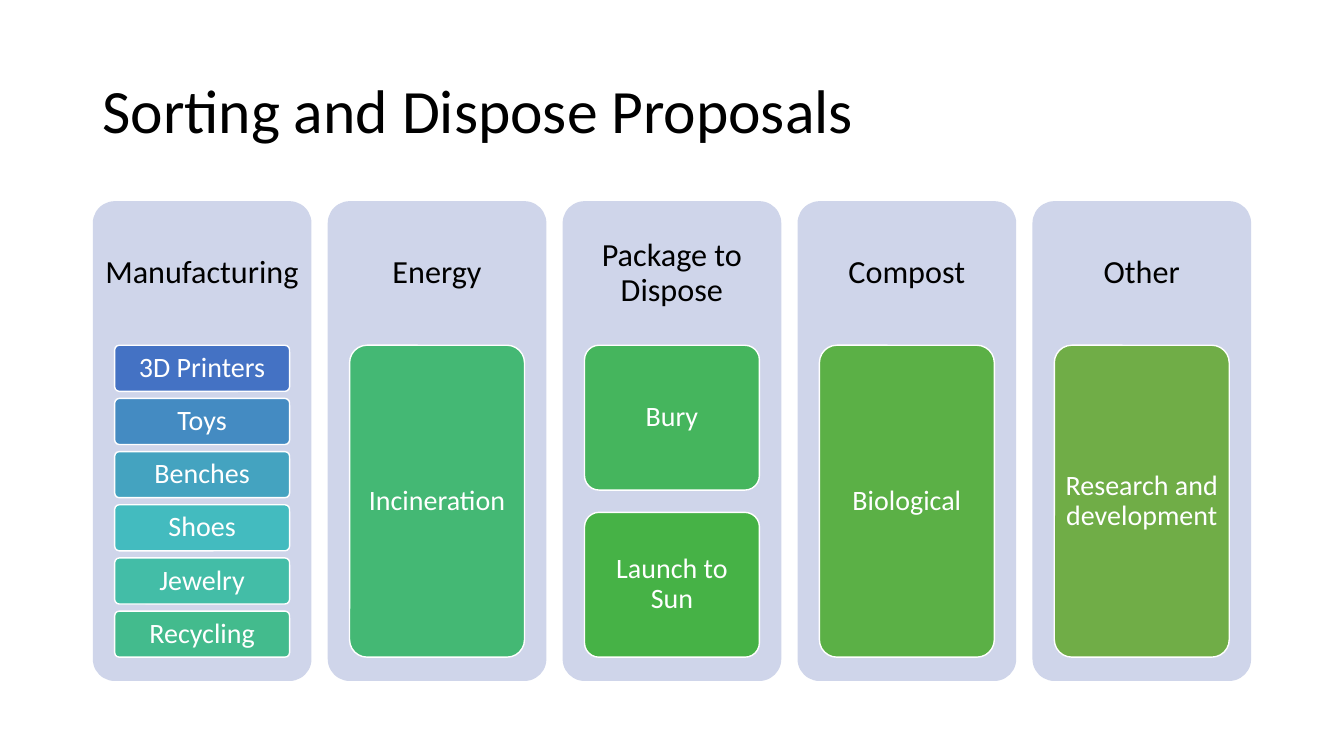
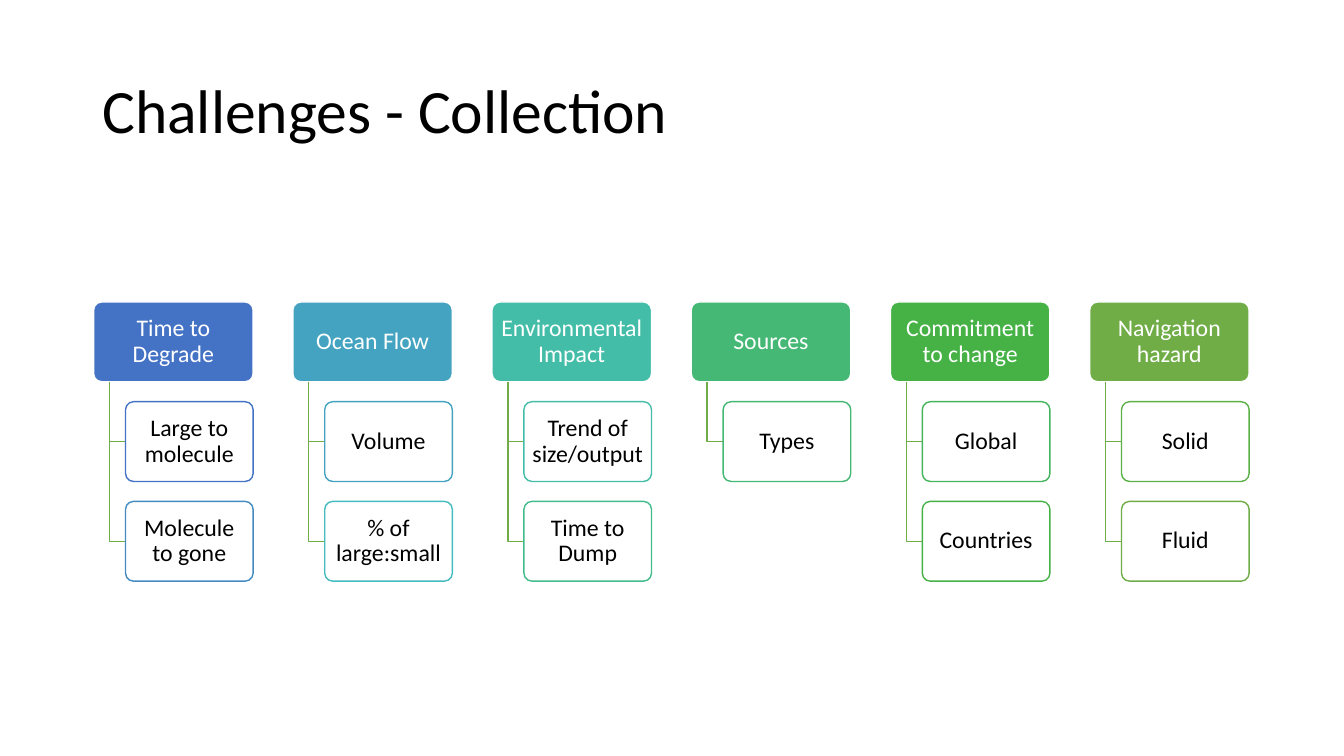
"""Build two slides: disposal proposals in columns and collection challenges as trees."""
from lxml.etree import SubElement
from pptx import Presentation
from pptx.dml.color import RGBColor
from pptx.enum.shapes import MSO_SHAPE as Preset
from pptx.enum.text import MSO_ANCHOR as Anchor, PP_ALIGN as Align
from pptx.oxml.ns import qn
from pptx.util import Cm, Pt

FONT = "Calibri"
BLACK = RGBColor(0x00, 0x00, 0x00)
WHITE = RGBColor(0xFF, 0xFF, 0xFF)
PANEL = RGBColor(0xCF, 0xD5, 0xEA)
BRANCH = RGBColor(0x70, 0xAD, 0x47)
RAMP = [RGBColor.from_string(code) for code in (
    "4472C4", "448BC2", "44A3C0", "43BBBF", "43BDA7", "43BB8D",
    "44B874", "45B55D", "46B246", "5BB046", "70AD47")]

PROPOSALS = [
    ("Manufacturing", ["3D Printers", "Toys", "Benches", "Shoes", "Jewelry", "Recycling"]),
    ("Energy", ["Incineration"]),
    ("Package to Dispose", ["Bury", "Launch to Sun"]),
    ("Compost", ["Biological"]),
    ("Other", ["Research and development"]),
]
CHALLENGES = [
    ("Time to Degrade", ["Large to molecule", "Molecule to gone"]),
    ("Ocean Flow", ["Volume", "% of large:small"]),
    ("Environmental Impact", ["Trend of size/output", "Time to Dump"]),
    ("Sources", ["Types"]),
    ("Commitment to change", ["Global", "Countries"]),
    ("Navigation hazard", ["Solid", "Fluid"]),
]


def write(shape, text, size, color, insets, align=Align.CENTER):
    frame = shape.text_frame
    frame.word_wrap = True
    frame.vertical_anchor = Anchor.MIDDLE
    frame.margin_left = frame.margin_right = Cm(insets[0])
    frame.margin_top = frame.margin_bottom = Cm(insets[1])
    para = frame.paragraphs[0]
    para.text = text
    para.alignment = align
    para.line_spacing = 0.9
    para.font.name = FONT
    para.font.size = Pt(size)
    para.font.color.rgb = color


def add_label(page, area, text, size, align=Align.CENTER):
    box = page.shapes.add_textbox(*map(Cm, area))
    write(box, text, size, BLACK, (0.25, 0.25), align)


def add_card(page, area, fill, line=None, opacity=None):
    card = page.shapes.add_shape(Preset.ROUNDED_RECTANGLE, *map(Cm, area))
    card.adjustments[0] = 0.1
    card.shadow.inherit = False
    card.fill.solid()
    card.fill.fore_color.rgb = fill
    if opacity is not None:
        color = next(card.element.spPr.iter(qn("a:srgbClr")))
        SubElement(color, qn("a:alpha")).set("val", str(opacity * 1000))
    if line is None:
        card.line.fill.background()
    else:
        card.line.color.rgb = line
        card.line.width = Pt(1)
    return card


def add_branch(page, left, top, right, bottom):
    outline = page.shapes.build_freeform(Cm(left), Cm(top))
    corners = [(Cm(left), Cm(bottom)), (Cm(right), Cm(bottom))]
    outline.add_line_segments(corners, close=False)
    branch = outline.convert_to_shape()
    branch.shadow.inherit = False
    branch.fill.background()
    branch.line.color.rgb = BRANCH
    branch.line.width = Pt(1)


def add_page(deck, title):
    page = deck.slides.add_slide(deck.slide_layouts[6])
    add_label(page, (2.33, 1.01, 29.21, 3.68), title, 44, Align.LEFT)
    return page


def add_column(page, left, heading, items, colors):
    top, width = 5.07, 5.51
    add_card(page, (left, top, width, 12.09), PANEL)
    add_label(page, (left, top, width, 3.63), heading, 23)
    stack_top, stack_height, gap_share = 8.7, 7.86, 2 / 13
    height = stack_height / (len(items) + (len(items) - 1) * gap_share)
    for index, item in enumerate(items):
        item_top = stack_top + index * height * (1 + gap_share)
        area = (left + width / 10, item_top, width * 0.8, height)
        card = add_card(page, area, next(colors), WHITE)
        write(card, item, 20, WHITE, (0.15, 0.1))


def add_tree(page, left, heading, items, head_color, colors):
    top, width, height = 7.61, 4.02, 2.01
    insets = (0.11, 0.06)
    head = add_card(page, (left, top, width, height), head_color, WHITE)
    write(head, heading, 17, WHITE, insets)
    item_left = left + width / 5
    for index, item in enumerate(items, start=1):
        item_top = top + index * height * 1.25
        add_branch(page, left + width / 10, top + height, item_left, item_top + height / 2)
        area = (item_left, item_top, width * 0.8, height)
        card = add_card(page, area, WHITE, next(colors), opacity=90)
        write(card, item, 17, BLACK, insets)


def main():
    deck = Presentation()
    deck.slide_width, deck.slide_height = Cm(33.87), Cm(19.05)

    page = add_page(deck, "Sorting and Dispose Proposals")
    colors = iter(RAMP)
    for index, (heading, items) in enumerate(PROPOSALS):
        add_column(page, 2.34 + index * 5.92, heading, items, colors)

    page = add_page(deck, "Challenges - Collection")
    colors = iter(RAMP)
    for index, (heading, items) in enumerate(CHALLENGES):
        add_tree(page, 2.36 + index * 5.02, heading, items, RAMP[index * 2], colors)

    deck.save("out.pptx")


if __name__ == "__main__":
    main()
